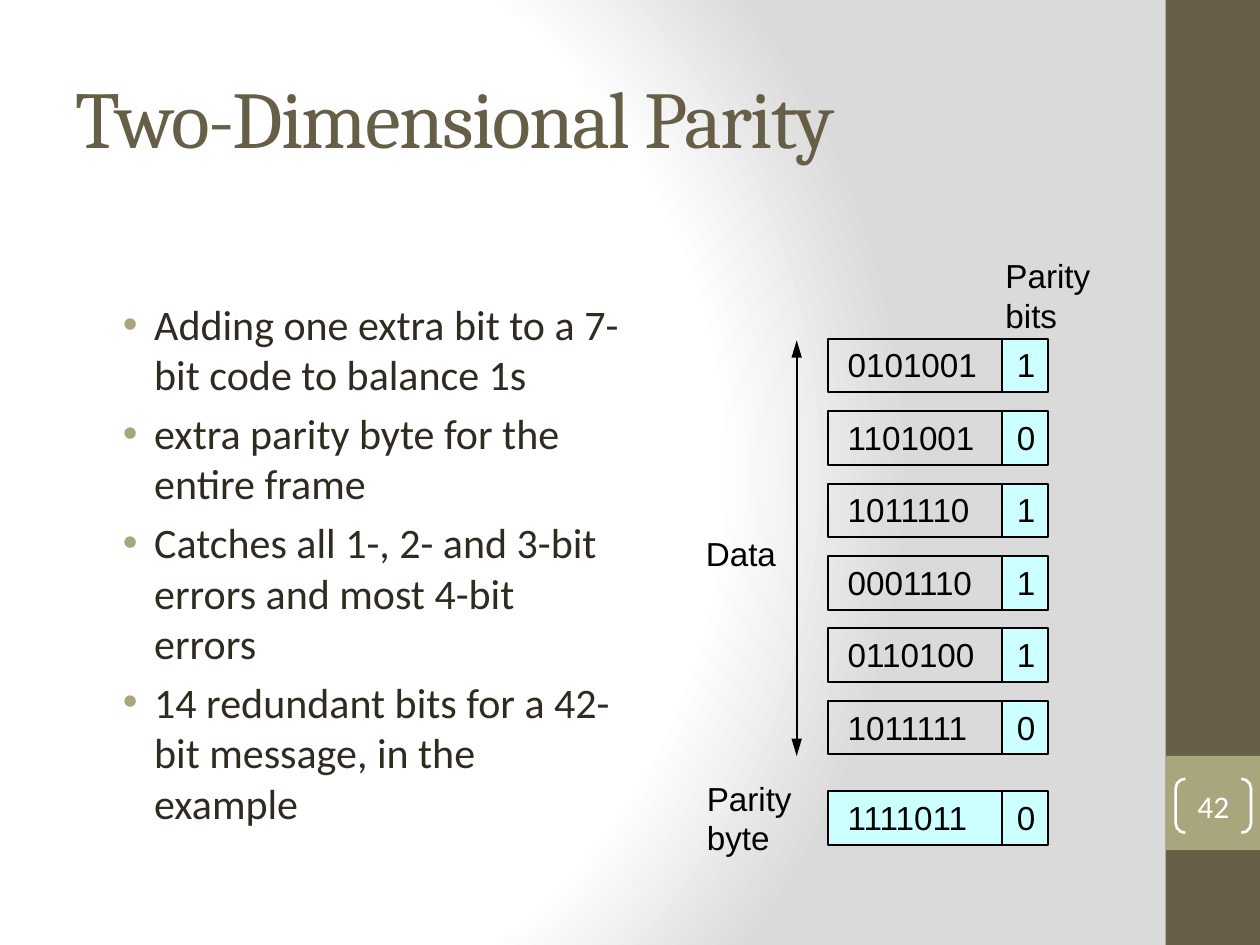
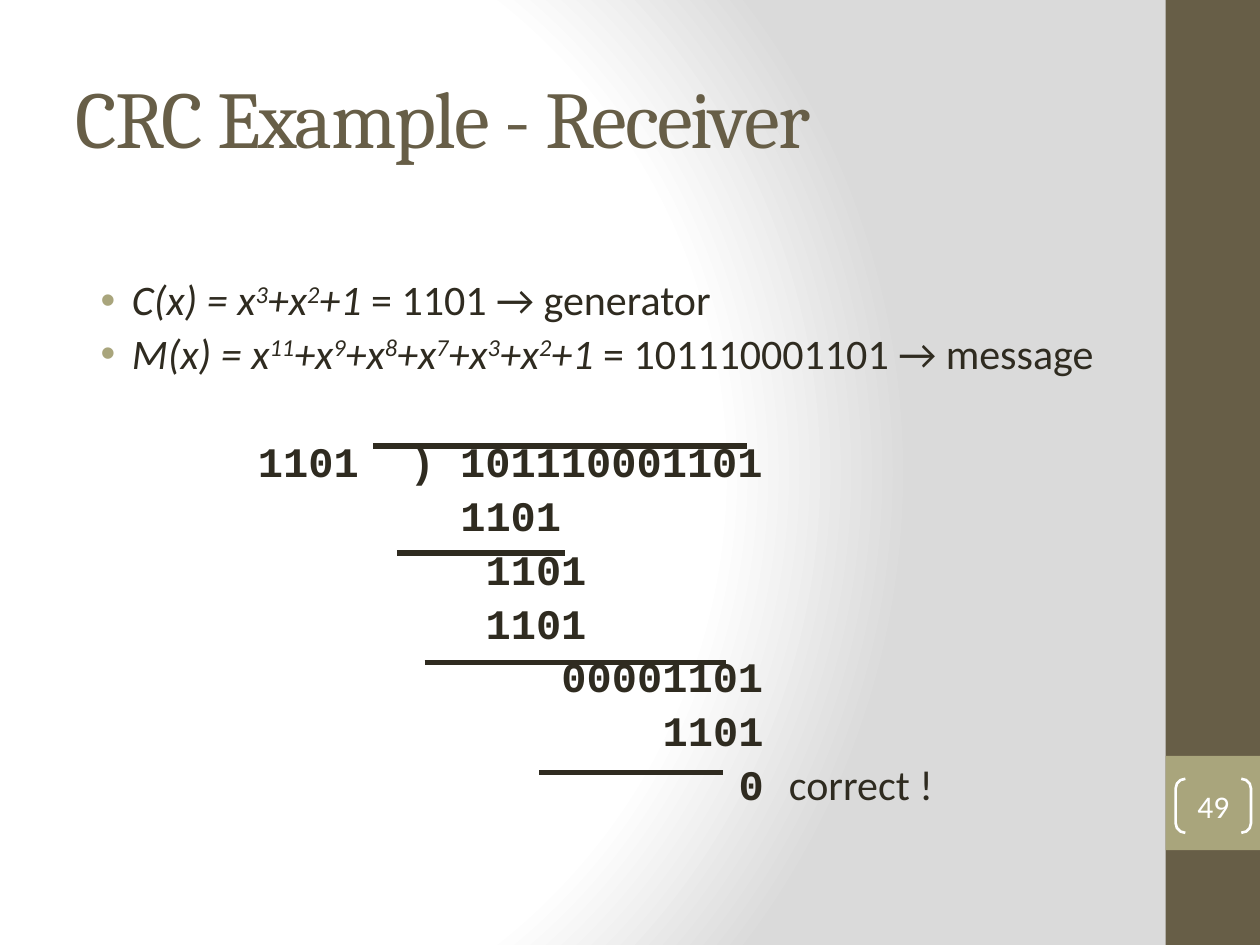
from lxml import etree
from pptx import Presentation
from pptx.dml.color import RGBColor
from pptx.enum.shapes import MSO_CONNECTOR as Connector, MSO_SHAPE as Shape
from pptx.enum.text import MSO_ANCHOR as Anchor, PP_ALIGN as Align
from pptx.oxml import parse_xml
from pptx.oxml.ns import nsdecls, qn
from pptx.util import Cm, Pt

COLORS = {
    "band": "675E47",
    "accent": "A9A57C",
    "text": "2F2B20",
    "white": "FFFFFF",
    "backdrop": "DADADA",
    "parity": "CCFFFF",
    "black": "000000",
}
TITLE_FONT, BODY_FONT, FIGURE_FONT, DIGIT_FONT = "Cambria", "Calibri", "Arial", "Courier New"
BODY_SIZE, FIGURE_SIZE = 24, 19
PARAGRAPH_GAP = 4.8
BLANK_LINE = 26.4

ROW_LEFT, ROW_WIDTH, ROW_HEIGHT = 16.69, 4.44, 1.08
FIRST_ROW_TOP, ROW_PITCH, PARITY_BYTE_TOP = 6.83, 1.46, 15.95
BIT_LEFT = 20.19
LABEL_WIDTH, LABEL_HEIGHT = 2.9, 0.81
DIVISION_LEFT, DIGIT_WIDTH = 3.5, 0.51


def rgb(color):
    return RGBColor.from_string(COLORS[color])


def style_run(run, font, size, color, bold=False, italic=False):
    run.font.name, run.font.size = font, Pt(size)
    run.font.bold, run.font.italic = bold, italic
    run.font.color.rgb = rgb(color)


def set_backdrop(master):
    """Give the master a white to grey circular gradient."""
    background = master.background
    background.fill.solid()
    stops = "".join(
        f'<a:gs pos="{place * 1000}"><a:srgbClr val="{COLORS[color]}"/></a:gs>'
        for place, color in ((0, "white"), (75, "white"), (100, "backdrop")))
    gradient = parse_xml(
        f'<a:gradFill rotWithShape="1" {nsdecls("a")}><a:gsLst>{stops}</a:gsLst>'
        '<a:path path="circle"><a:fillToRect l="20000" t="50000" r="100000" b="50000"/>'
        '</a:path></a:gradFill>')
    solid = master.element.find(".//" + qn("p:bgPr")).find(qn("a:solidFill"))
    solid.getparent().replace(solid, gradient)


def add_box(slide, left, top, width, height, fill=None, line=None, weight=1.13, kind=Shape.RECTANGLE):
    box = slide.shapes.add_shape(kind, Cm(left), Cm(top), Cm(width), Cm(height))
    box.shadow.inherit = False
    if fill:
        box.fill.solid()
        box.fill.fore_color.rgb = rgb(fill)
    else:
        box.fill.background()
    if line:
        box.line.color.rgb = rgb(line)
        box.line.width = Pt(weight)
    else:
        box.line.fill.background()
    return box


def add_line(slide, start, end, color, weight, arrows=False):
    line = slide.shapes.add_connector(
        Connector.STRAIGHT, *(Cm(value) for value in (*start, *end)))
    line.line.color.rgb = rgb(color)
    line.line.width = Pt(weight)
    if arrows:
        outline = line.line._get_or_add_ln()
        for tip in ("a:headEnd", "a:tailEnd"):
            etree.SubElement(outline, qn(tip), type="triangle", w="med", len="lg")
    etree.SubElement(line._element.spPr, qn("a:effectLst"))


def add_text_frame(slide, left, top, width, height):
    frame = slide.shapes.add_textbox(Cm(left), Cm(top), Cm(width), Cm(height)).text_frame
    frame.word_wrap = True
    return frame


def remove_margins(frame):
    frame.margin_left = frame.margin_top = frame.margin_right = frame.margin_bottom = 0


def add_label(slide, left, top, text):
    """Place figure text, one paragraph a line, whose corner is exactly at left, top."""
    lines = text.split("\n")
    frame = add_text_frame(slide, left, top, LABEL_WIDTH, LABEL_HEIGHT * len(lines))
    remove_margins(frame)
    frame.text = text
    for paragraph in frame.paragraphs:
        style_run(paragraph.runs[0], FIGURE_FONT, FIGURE_SIZE, "black")


def add_themed_slide(deck, title, number):
    slide = deck.slides.add_slide(deck.slide_layouts[6])
    add_box(slide, 23.5, 0, 1.9, 19.05, fill="band")
    add_box(slide, 23.5, 15.24, 1.9, 1.9, fill="accent")

    heading = add_text_frame(slide, 1.27, 0.76, 21.16, 3.18)
    heading.vertical_anchor = Anchor.MIDDLE
    heading.text = title
    heading_run = heading.paragraphs[0].runs[0]
    style_run(heading_run, TITLE_FONT, 46, "band")
    heading_run.font._element.set("spc", "-100")

    bracket = add_box(slide, 23.7, 15.7, 1.52, 1.09, line="white", weight=1.5,
                      kind=Shape.DOUBLE_BRACKET)
    bracket.adjustments[0] = 0.18
    page = bracket.text_frame
    remove_margins(page)
    page.vertical_anchor = Anchor.MIDDLE
    page.text = str(number)
    page.paragraphs[0].alignment = Align.CENTER
    style_run(page.paragraphs[0].runs[0], BODY_FONT, 18, "white")
    return slide


def next_paragraph(frame):
    """Return the empty first paragraph, or a new one with a gap before it."""
    if not frame.paragraphs[0].runs:
        return frame.paragraphs[0]
    paragraph = frame.add_paragraph()
    paragraph.space_before = Pt(PARAGRAPH_GAP)
    return paragraph


def add_bullet(paragraph):
    properties = paragraph._p.get_or_add_pPr()
    properties.set("marL", str(Cm(0.96)))
    properties.set("indent", str(Cm(-0.63)))
    color = etree.SubElement(properties, qn("a:buClr"))
    etree.SubElement(color, qn("a:srgbClr"), val=COLORS["accent"])
    etree.SubElement(properties, qn("a:buFont"), typeface="Arial")
    etree.SubElement(properties, qn("a:buChar"), char="•")


def add_body_run(paragraph, text, font=BODY_FONT, bold=False, italic=False, raised=False):
    run = paragraph.add_run()
    run.text = text
    style_run(run, font, BODY_SIZE, "text", bold, italic)
    if raised:
        run.font._element.set("baseline", "30000")


def add_polynomial(frame, name, exponents, meaning):
    paragraph = next_paragraph(frame)
    add_bullet(paragraph)
    paragraph.line_spacing = 0.9
    lead = f"{name}(x) = x"
    for exponent in exponents:
        add_body_run(paragraph, lead, italic=True)
        add_body_run(paragraph, str(exponent), italic=True, raised=True)
        lead = "+x"
    add_body_run(paragraph, "+1", italic=True)
    add_body_run(paragraph, f" = {meaning}")


def add_division_row(frame, cells):
    """Add a row of (digit column, digits) cells, each held by a tab stop."""
    paragraph = next_paragraph(frame)
    paragraph.line_spacing = 0.9
    tabs = etree.SubElement(paragraph._p.get_or_add_pPr(), qn("a:tabLst"))
    for column, digits in cells:
        stop = Cm(DIVISION_LEFT + column * DIGIT_WIDTH)
        etree.SubElement(tabs, qn("a:tab"), pos=str(stop), algn="l")
        add_body_run(paragraph, "\t")
        add_body_run(paragraph, digits, DIGIT_FONT, bold=True)
    return paragraph


def add_parity_row(slide, top, data, parity_bit, data_fill=None):
    add_box(slide, BIT_LEFT, top, ROW_LEFT + ROW_WIDTH - BIT_LEFT, ROW_HEIGHT, fill="parity")
    add_box(slide, ROW_LEFT, top, ROW_WIDTH, ROW_HEIGHT, line="black", fill=data_fill)
    add_line(slide, (BIT_LEFT, top), (BIT_LEFT, top + ROW_HEIGHT), "black", 1.13)
    add_label(slide, ROW_LEFT + 0.4, top + 0.12, data)
    add_label(slide, BIT_LEFT + 0.31, top + 0.12, parity_bit)


def build_parity_slide(deck):
    slide = add_themed_slide(deck, "Two-Dimensional Parity", 42)
    body = add_text_frame(slide, 1.9, 5.89, 10.95, 11.05)
    for point in ("Adding one extra bit to a 7-bit code to balance 1s",
                  "extra parity byte for the entire frame",
                  "Catches all 1-, 2- and 3-bit errors and most 4-bit errors",
                  "14 redundant bits for a 42-bit message, in the example"):
        paragraph = next_paragraph(body)
        add_bullet(paragraph)
        add_body_run(paragraph, point)

    data_rows = (("0101001", "1"), ("1101001", "0"), ("1011110", "1"),
                 ("0001110", "1"), ("0110100", "1"), ("1011111", "0"))
    for index, (data, parity_bit) in enumerate(data_rows):
        add_parity_row(slide, FIRST_ROW_TOP + index * ROW_PITCH, data, parity_bit)
    add_parity_row(slide, PARITY_BYTE_TOP, "1111011", "0", data_fill="parity")

    add_label(slide, 20.27, 5.14, "Parity\nbits")
    add_label(slide, 14.25, 15.68, "Parity\nbyte")
    add_label(slide, 14.23, 10.75, "Data")
    add_line(slide, (16.06, 6.86), (16.06, 15.24), "black", 1.13, arrows=True)


def build_crc_slide(deck):
    slide = add_themed_slide(deck, "CRC Example - Receiver", 49)
    body = add_text_frame(slide, 1.45, 5.51, 22.71, 11.43)
    add_polynomial(body, "C", (3, 2), "1101 → generator")
    add_polynomial(body, "M", (11, 9, 8, 7, 3, 2), "101110001101 → message")

    dividend = add_division_row(body, ((0, "1101"), (6, ") 101110001101")))
    dividend.space_before = Pt(2 * PARAGRAPH_GAP + BLANK_LINE)
    for column, digits in ((8, "1101"), (9, "1101"), (9, "1101"), (12, "00001101"), (16, "1101")):
        add_division_row(body, ((column, digits),))
    remainder = add_division_row(body, ((19, "0 "),))
    add_body_run(remainder, "correct !")

    for left, right, top in ((7.52, 15.06, 8.99), (8, 11.38, 11.15),
                             (8.56, 14.63, 13.36), (10.87, 14.58, 15.57)):
        add_line(slide, (left, top), (right, top), "text", 3)


def main():
    deck = Presentation()
    deck.slide_width, deck.slide_height = Cm(25.4), Cm(19.05)
    set_backdrop(deck.slide_master)
    build_parity_slide(deck)
    build_crc_slide(deck)
    deck.save("out.pptx")


if __name__ == "__main__":
    main()
